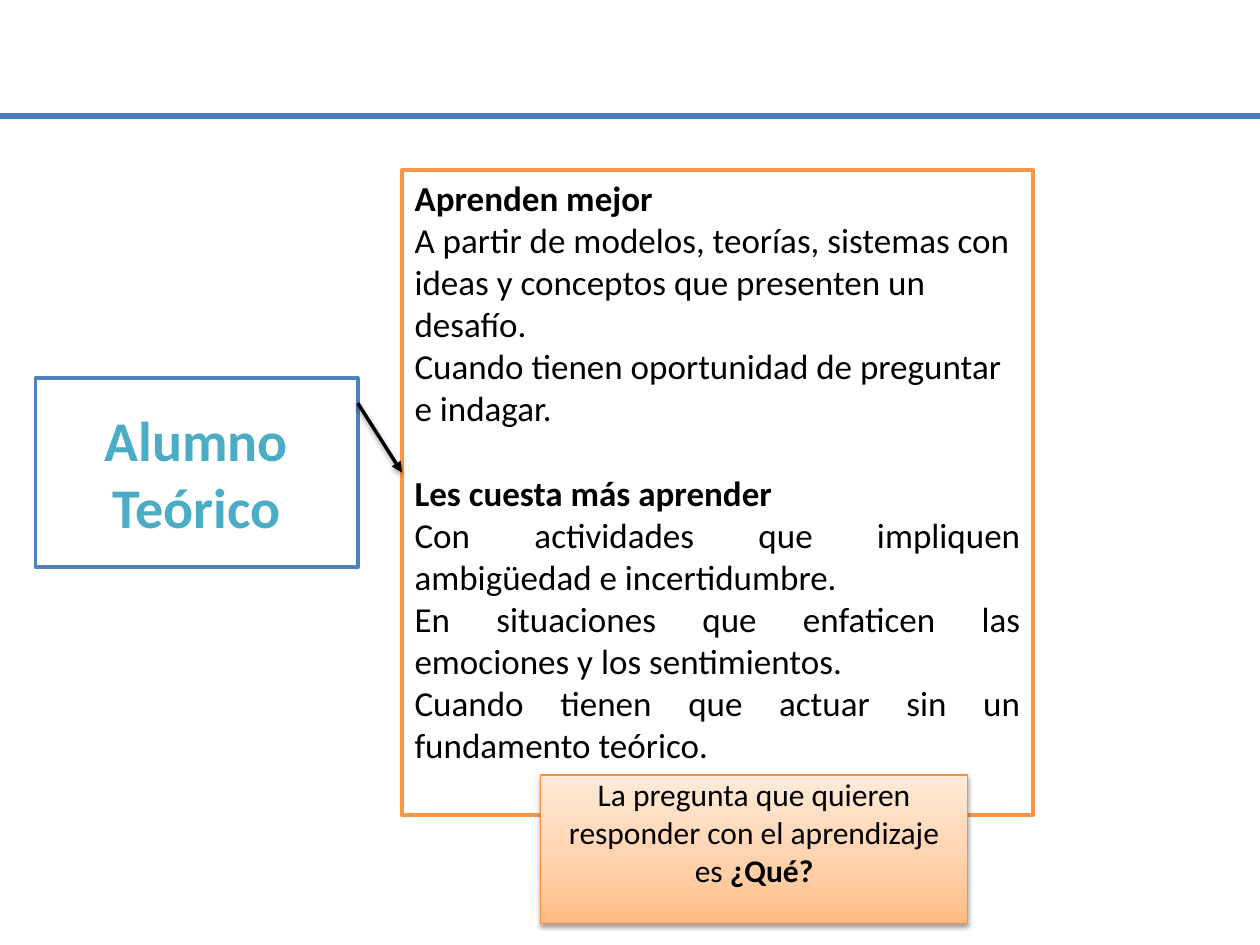
from pptx import Presentation
from pptx.dml.color import RGBColor
from pptx.enum.shapes import MSO_CONNECTOR as Connector, MSO_SHAPE as Shape
from pptx.enum.text import MSO_ANCHOR as Anchor, MSO_AUTO_SIZE as AutoSize, PP_ALIGN as Align
from pptx.oxml import parse_xml
from pptx.oxml.ns import nsdecls
from pptx.util import Inches, Pt

COLORS = {
    "white": "FFFFFF", "black": "000000", "rule": "4A7DBA", "blue": "4F81BD",
    "teal": "4BACC6", "orange": "F79646", "edge": "F5913F",
}
QUESTION_STOPS = [(0, "FFBB82"), (35, "FFCFA8"), (100, "FFEBD9")]

LEARNS_BEST = [
    "A partir de modelos, teorías, sistemas con ideas y conceptos que presenten un desafío.",
    "Cuando tienen oportunidad de preguntar e indagar.",
]
LEARNS_WORST = [
    "Con actividades que impliquen ambigüedad e incertidumbre.",
    "En situaciones que enfaticen las emociones y los sentimientos.",
    "Cuando tienen que actuar sin un fundamento teórico.",
]


def color(name):
    return RGBColor.from_string(COLORS[name])


def add_xml(parent, xml):
    """Append an element written in the a: namespace."""
    tag, rest = xml[:-1].split(" ", 1) if " " in xml.split(">")[0] else (None, None)
    head = xml.split(">")[0].rstrip("/").split(" ")[0]
    parent.append(parse_xml(xml.replace(head, f"{head} {nsdecls('a')}", 1)))


def add_shadow(element):
    add_xml(element.spPr,
            '<a:effectLst><a:outerShdw blurRad="40000" dist="20000" dir="5400000" rotWithShape="0">'
            f'<a:srgbClr val="{COLORS["black"]}"><a:alpha val="38000"/></a:srgbClr>'
            '</a:outerShdw></a:effectLst>')


def place(shape, left, top, width, height):
    shape.left, shape.top = Inches(left), Inches(top)
    shape.width, shape.height = Inches(width), Inches(height)


def outline(shape, name, points):
    shape.line.color.rgb = color(name)
    shape.line.width = Pt(points)


def set_font(para, size, name, bold=None):
    font = para.font
    font.name, font.size, font.bold = "Calibri", Pt(size), bold
    font.color.rgb = color(name)


def add_frame(box, bounds, edge):
    """Turn a placeholder into a white framed box and return its text frame."""
    place(box, *bounds)
    box.fill.solid()
    box.fill.fore_color.rgb = color("white")
    outline(box, edge, 2)
    box.text_frame.auto_size = AutoSize.NONE
    return box.text_frame


def add_line(page, start, end, name, points):
    line = page.shapes.add_connector(Connector.STRAIGHT, *map(Inches, start + end))
    outline(line, name, points)
    return line


def fill_label(box):
    frame = add_frame(box, (0.28, 3, 2.56, 1.5), "blue")
    frame.vertical_anchor = Anchor.MIDDLE
    frame.text = "Alumno\nTeórico"
    for para in frame.paragraphs:
        para.alignment = Align.CENTER
        set_font(para, 32, "teal", True)


def fill_traits(box):
    frame = add_frame(box, (3.19, 1.35, 5.01, 5.12), "orange")
    groups = [("Aprenden mejor", LEARNS_BEST, Align.LEFT, 0),
              ("Les cuesta más aprender", LEARNS_WORST, Align.JUSTIFY, 24.4)]
    rows = []
    for heading, items, align, gap in groups:
        rows.append((heading, Align.LEFT, gap, True))
        rows += [(item, align, 0, False) for item in items]
    frame.text = "\n".join(row[0] for row in rows)
    for para, (_, align, gap, bold) in zip(frame.paragraphs, rows):
        props = para._p.get_or_add_pPr()
        props.set("marL", "0")
        props.set("indent", "0")
        add_xml(props, "<a:buNone/>")
        para.alignment = align
        para.space_before = Pt(gap)
        set_font(para, 20, "black", bold)


def add_question(page):
    box = page.shapes.add_shape(Shape.RECTANGLE, 0, 0, 0, 0)
    place(box, 4.29, 6.15, 3.39, 1.18)
    stops = "".join(f'<a:gs pos="{pos * 1000}"><a:srgbClr val="{hue}"/></a:gs>'
                    for pos, hue in QUESTION_STOPS)
    add_xml(box._element.spPr, f'<a:gradFill><a:gsLst>{stops}</a:gsLst>'
                               '<a:lin ang="16200000" scaled="0"/></a:gradFill>')
    outline(box, "edge", 0.75)
    add_shadow(box._element)
    frame = box.text_frame
    frame.word_wrap = True
    frame.vertical_anchor = Anchor.TOP
    frame.margin_top = 0
    para = frame.paragraphs[0]
    para.alignment = Align.CENTER
    para.add_run().text = "La pregunta que quieren responder con el aprendizaje es "
    answer = para.add_run()
    answer.text = "¿Qué?"
    answer.font.bold = True
    set_font(para, 18, "black")


def add_arrow(page):
    arrow = add_line(page, (2.84, 3.2), (3.19, 3.75), "black", 2)
    add_xml(arrow.line._get_or_add_ln(), '<a:tailEnd type="triangle"/>')
    add_shadow(arrow._element)


def main():
    deck = Presentation()
    deck.slide_width, deck.slide_height = Inches(10), Inches(7.5)
    page = deck.slides.add_slide(deck.slide_layouts[1])
    rule = add_line(page, (0, 0.92), (10, 0.92), "rule", 3)
    add_xml(rule._element.spPr, "<a:effectLst/>")
    fill_label(page.shapes.title)
    fill_traits(page.placeholders[1])
    add_question(page)
    add_arrow(page)
    deck.save("out.pptx")


if __name__ == "__main__":
    main()
